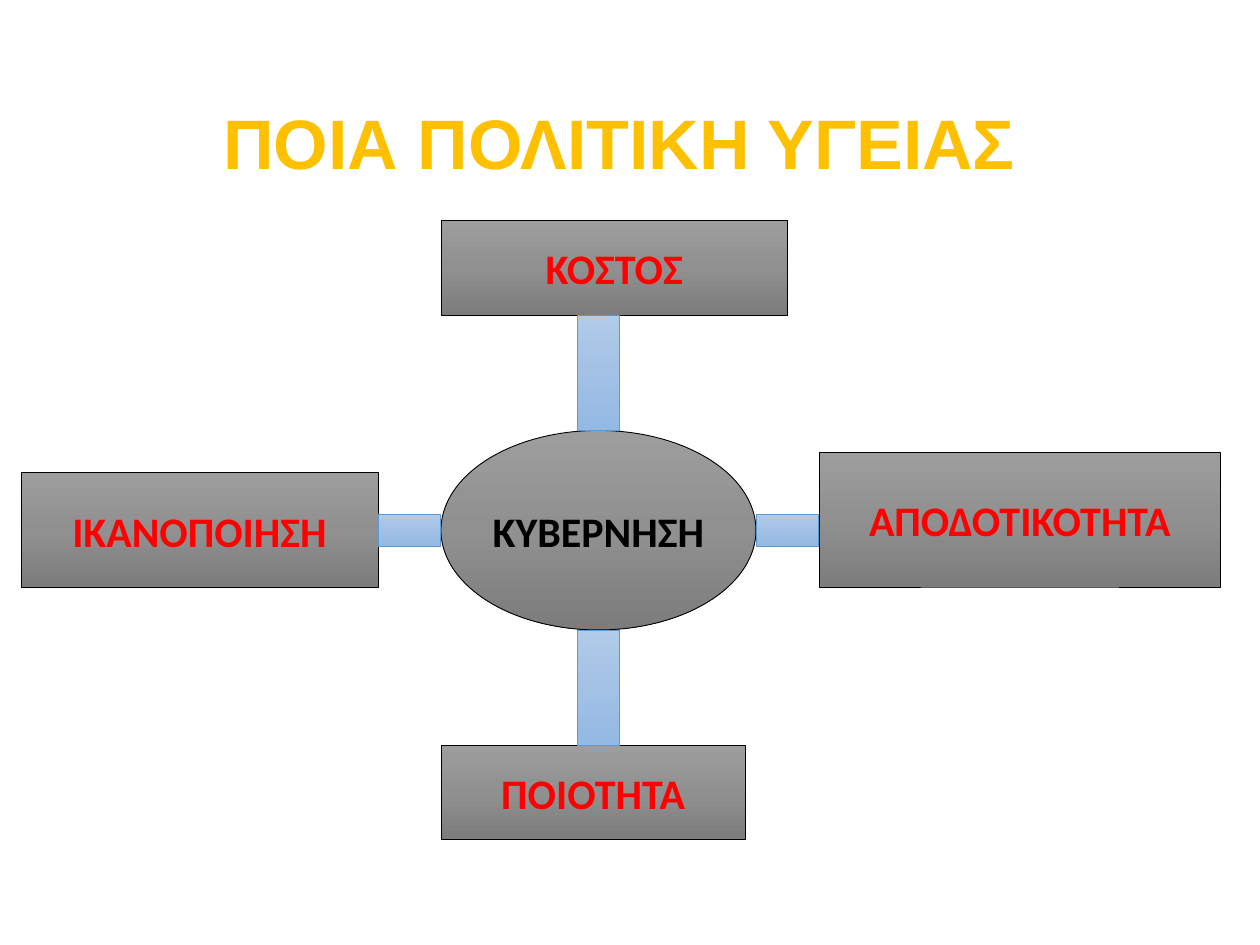
from copy import deepcopy

from pptx import Presentation
from pptx.dml.color import RGBColor
from pptx.enum.shapes import MSO_SHAPE
from pptx.enum.text import MSO_ANCHOR, PP_ALIGN
from pptx.oxml.ns import qn
from pptx.util import Pt

# Content: text, shape, left, top, width, height, text colour
TITLE = "ΠΟΙΑ ΠΟΛΙΤΙΚΗ ΥΓΕΙΑΣ"
HUB = ("ΚΥΒΕΡΝΗΣΗ", MSO_SHAPE.OVAL, 252, 246, 180, 114, "000000")
FACTORS = {
    "top": ("ΚΟΣΤΟΣ", MSO_SHAPE.RECTANGLE, 252, 126, 198, 54, "FF0000"),
    "right": ("ΑΠΟΔΟΤΙΚΟΤΗΤΑ", MSO_SHAPE.RECTANGLE, 468, 258.5, 229.5, 77, "FF0000"),
    "bottom": ("ΠΟΙΟΤΗΤΑ", MSO_SHAPE.RECTANGLE, 252, 426, 174, 54, "FF0000"),
    "left": ("ΙΚΑΝΟΠΟΙΗΣΗ", MSO_SHAPE.RECTANGLE, 12, 270, 204, 66, "FF0000"),
}
GREY = ("9D9D9D", "909090", "7C7C7C")
BLUE = ("B1CBE9", "A3C1E5", "93B9E4")
BAR_TOP, BAR_HEIGHT, BAR_WIDTH = 294, 18, 24


def rgb(value):
    return RGBColor.from_string(value)


def set_text(sp, text, font, size, color, wrap):
    tf = sp.text_frame
    tf.word_wrap = wrap
    tf.vertical_anchor = MSO_ANCHOR.MIDDLE
    p = tf.paragraphs[0]
    p.alignment = PP_ALIGN.CENTER
    r = p.add_run()
    r.text = text
    for name, value in {"name": font, "size": Pt(size), "bold": True}.items():
        setattr(r.font, name, value)
    r.font.color.rgb = rgb(color)


def add_block(s, kind, box, colors, line):
    sp = s.shapes.add_shape(kind, *(Pt(v) for v in box))
    sp.shadow.inherit = False
    sp.fill.gradient()
    sp.fill.gradient_angle = 270
    # Third gradient stop
    stops = sp._element.spPr.find(qn("a:gradFill")).find(qn("a:gsLst"))
    stops.insert(1, deepcopy(stops[0]))
    for stop, position, color in zip(sp.fill.gradient_stops, (0, 0.5, 1), colors):
        stop.position = position
        stop.color.rgb = rgb(color)
    sp.line.color.rgb = rgb(line)
    sp.line.width = Pt(0.5)
    return sp


prs = Presentation()
prs.slide_width, prs.slide_height = Pt(720), Pt(540)
s = prs.slides.add_slide(prs.slide_layouts[5])

# Title
title = s.shapes.title
title.left, title.top, title.width, title.height = Pt(48), Pt(36), Pt(612), Pt(90)
set_text(title, TITLE, "Arial", 40, "FFC000", True)

# Hub and factors
for text, kind, *box, color in (HUB, *FACTORS.values()):
    sp = add_block(s, kind, box, GREY, "000000")
    set_text(sp, text, "Calibri", 24, color, False)

# Bars fill the gaps between the hub and each factor
_, _, x, y, w, h, _ = HUB
bar_left = x + (w - BAR_WIDTH) / 2
left_edge = FACTORS["left"][2] + FACTORS["left"][4]
top_edge = FACTORS["top"][3] + FACTORS["top"][5]
bars = [
    (left_edge, BAR_TOP, x - left_edge, BAR_HEIGHT),
    (x + w, BAR_TOP, FACTORS["right"][2] - x - w, BAR_HEIGHT),
    (bar_left, top_edge, BAR_WIDTH, y - top_edge),
    (bar_left, y + h, BAR_WIDTH, FACTORS["bottom"][3] - y - h),
]
for box in bars:
    add_block(s, MSO_SHAPE.RECTANGLE, box, BLUE, "5B9BD5")

prs.save("out.pptx")
